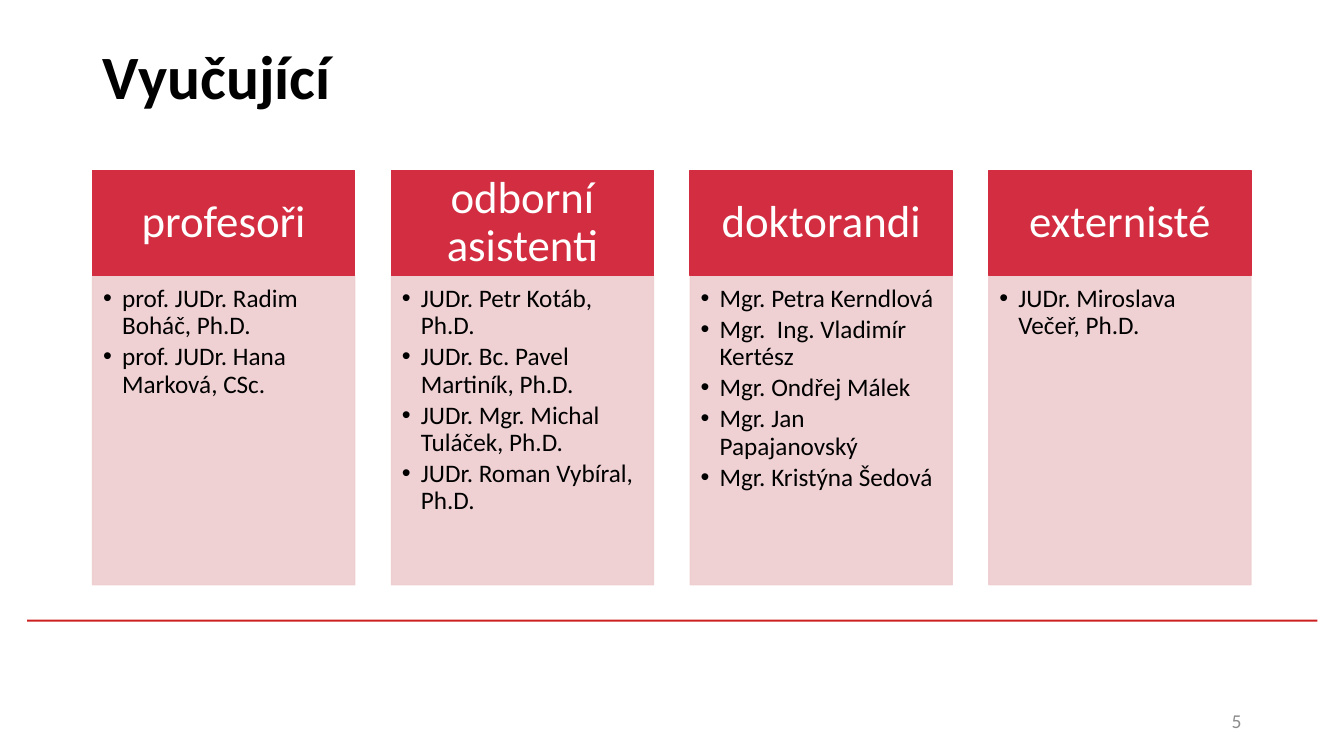
"""Builds the slide that lists the teaching staff in four columns."""
from dataclasses import dataclass

from lxml import etree
from pptx import Presentation
from pptx import util as u
from pptx.dml import color
from pptx.enum import shapes, text
from pptx.oxml import ns


@dataclass(frozen=True)
class Theme:
    """Holds the colours, type sizes and font."""
    red: str = "D22D40"
    pink: str = "EECDCF"
    rule: str = "CD1F21"
    black: str = "000000"
    white: str = "FFFFFF"
    grey: str = "8C8C8C"
    title_size: int = 44
    heading_size: int = 32
    list_size: int = 18
    number_size: int = 14
    panel_opacity: int = 90
    font: str = "Calibri"


class SlideBuilder:
    """Draws styled elements on one slide, with lengths in points."""

    def __init__(self, slide, theme):
        """Keeps the slide and its theme."""
        self.slide = slide
        self.theme = theme

    def place(self, shape, box):
        """Moves a shape to a box of left, top, width and height."""
        for name, value in zip(("left", "top", "width", "height"), box):
            setattr(shape, name, u.Pt(value))

    def paint(self, shape, fill, outlined=True):
        """Gives a shape a solid fill and a matching outline."""
        shape.fill.solid()
        shape.fill.fore_color.rgb = color.RGBColor.from_string(fill)
        if outlined:
            shape.line.color.rgb = color.RGBColor.from_string(fill)
            shape.line.width = u.Pt(1)
        else:
            shape.line.fill.background()

    def fade(self, shape, percent):
        """Sets the opacity of the fill and outline of a shape."""
        for solid in shape.element.spPr.iter(ns.qn("a:solidFill")):
            etree.SubElement(solid[0], ns.qn("a:alpha"), val=str(percent * 1000))

    def bullet(self, paragraph, indent):
        """Adds a round bullet with a hanging indent."""
        properties = paragraph._p.get_or_add_pPr()
        properties.set("marL", str(u.Pt(indent)))
        properties.set("indent", str(-u.Pt(indent)))
        etree.SubElement(properties, ns.qn("a:buFont"), typeface="Arial")
        etree.SubElement(properties, ns.qn("a:buChar"), char="•")

    def set_text(self, shape, lines, size, ink, anchor, align, bold=False,
                 insets=(7.2, 3.6, 7.2, 3.6), spacing=1.0, after=0, indent=None):
        """Fills a shape with formatted paragraphs."""
        frame = shape.text_frame
        left, top, right, bottom = (u.Pt(inset) for inset in insets)
        frame_format = {"word_wrap": True, "auto_size": text.MSO_AUTO_SIZE.NONE,
                        "vertical_anchor": anchor, "margin_left": left,
                        "margin_top": top, "margin_right": right,
                        "margin_bottom": bottom}
        for name, value in frame_format.items():
            setattr(frame, name, value)
        paragraph_format = {"alignment": align, "line_spacing": spacing,
                            "space_before": u.Pt(0), "space_after": u.Pt(after)}
        font_format = {"name": self.theme.font, "size": u.Pt(size), "bold": bold}
        for position, line in enumerate(lines):
            paragraph = frame.add_paragraph() if position else frame.paragraphs[0]
            if indent:
                self.bullet(paragraph, indent)
            for name, value in paragraph_format.items():
                setattr(paragraph, name, value)
            run = paragraph.add_run()
            run.text = line
            for name, value in font_format.items():
                setattr(run.font, name, value)
            run.font.color.rgb = color.RGBColor.from_string(ink)

    def rectangle(self, box, fill, outlined=True):
        """Adds a flat rectangle."""
        shape = self.slide.shapes.add_shape(
            shapes.MSO_SHAPE.RECTANGLE, *(u.Pt(value) for value in box))
        shape.shadow.inherit = False
        self.paint(shape, fill, outlined)
        return shape

    def title(self, wording, box):
        """Places the slide title."""
        shape = self.slide.shapes.title
        self.place(shape, box)
        self.set_text(shape, [wording], self.theme.title_size, self.theme.black,
                      text.MSO_ANCHOR.MIDDLE, text.PP_ALIGN.LEFT, bold=True)

    def heading(self, wording, box):
        """Adds a red column heading."""
        shape = self.rectangle(box, self.theme.red)
        self.set_text(shape, [wording], self.theme.heading_size, self.theme.white,
                      text.MSO_ANCHOR.MIDDLE, text.PP_ALIGN.CENTER,
                      insets=(18, 10, 18, 10), spacing=0.9)

    def name_list(self, placeholder, names, box):
        """Turns a body placeholder into a tinted list of names."""
        self.place(placeholder, box)
        self.paint(placeholder, self.theme.pink)
        self.fade(placeholder, self.theme.panel_opacity)
        self.set_text(placeholder, names, self.theme.list_size, self.theme.black,
                      text.MSO_ANCHOR.TOP, text.PP_ALIGN.LEFT,
                      insets=(7.5, 7.5, 10, 11.5), spacing=0.9, after=2.7, indent=13.5)

    def page_number(self, number, box):
        """Adds the page number."""
        shape = self.slide.shapes.add_textbox(*(u.Pt(value) for value in box))
        self.set_text(shape, [number], self.theme.number_size, self.theme.grey,
                      text.MSO_ANCHOR.MIDDLE, text.PP_ALIGN.RIGHT)


STAFF = {
    "profesoři": ["prof. JUDr. Radim Boháč, Ph.D.", "prof. JUDr. Hana Marková, CSc."],
    "odborní asistenti": ["JUDr. Petr Kotáb, Ph.D.", "JUDr. Bc. Pavel Martiník, Ph.D.",
                          "JUDr. Mgr. Michal Tuláček, Ph.D.",
                          "JUDr. Roman Vybíral, Ph.D."],
    "doktorandi": ["Mgr. Petra Kerndlová", "Mgr.  Ing. Vladimír Kertész",
                   "Mgr. Ondřej Málek", "Mgr. Jan Papajanovský",
                   "Mgr. Kristýna Šedová"],
    "externisté": ["JUDr. Miroslava Večeř, Ph.D."],
}
LEFT, TOP, WIDTH, PITCH = 66.2, 121.8, 187.2, 213.4
HEADING_HEIGHT, LIST_HEIGHT = 74.9, 221


def main():
    """Builds and saves the presentation."""
    presentation = Presentation()
    presentation.slide_width, presentation.slide_height = u.Pt(960), u.Pt(540)
    slide = presentation.slides.add_slide(
        presentation.slide_layouts.get_by_name("Comparison"))
    builder = SlideBuilder(slide, Theme())
    builder.rectangle((19.4, 442.6, 921.6, 1.5), builder.theme.rule, outlined=False)
    builder.title("Vyučující", (LEFT, 1.4, 828, 104.4))
    bodies = list(slide.placeholders)[1:]
    for column, (body, (group, names)) in enumerate(zip(bodies, STAFF.items())):
        left = LEFT + column * PITCH
        builder.heading(group, (left, TOP, WIDTH, HEADING_HEIGHT))
        builder.name_list(body, names, (left, TOP + HEADING_HEIGHT, WIDTH, LIST_HEIGHT))
    builder.page_number("5", (678, 500.5, 216, 28.8))
    presentation.save("out.pptx")


if __name__ == "__main__":
    main()
